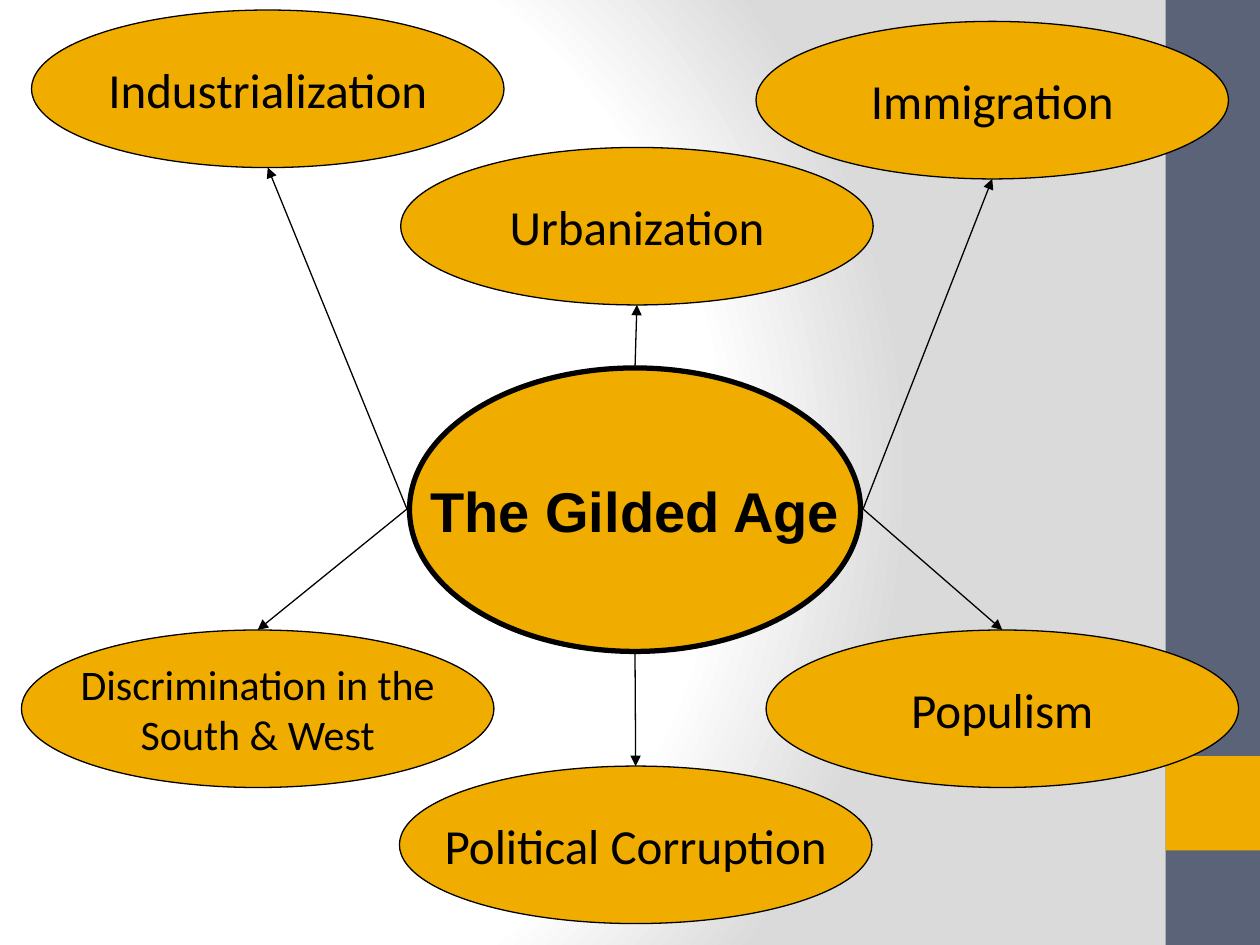
import pptx
import pptx.dml.color
import pptx.enum.shapes
import pptx.enum.text
import pptx.oxml
import pptx.oxml.ns
import pptx.util
from lxml import etree

Inches = pptx.util.Inches
Pt = pptx.util.Pt
RGBColor = pptx.dml.color.RGBColor
Shape = pptx.enum.shapes.MSO_SHAPE
qn = pptx.oxml.ns.qn

SLATE = RGBColor(0x5A, 0x63, 0x78)
GOLD = RGBColor(0xF0, 0xAD, 0x00)
BLACK = RGBColor(0, 0, 0)
WHITE = RGBColor(0xFF, 0xFF, 0xFF)
GRAY = RGBColor(0xDA, 0xDA, 0xDA)

TOPIC_WIDTH, TOPIC_HEIGHT = 3.75, 1.25


class ConceptMap:
    fill = GOLD
    ink = BLACK
    thin = 0.75

    def __init__(self, slide):
        self.slide = slide

    def background(self, stops):
        self.slide.background.fill.gradient()
        gradient = self.slide.element.find(".//" + qn("a:gradFill"))
        stop_xml = "".join(
            f'<a:gs pos="{percent * 1000}"><a:srgbClr val="{color}"/></a:gs>'
            for percent, color in stops
        )
        glow = pptx.oxml.parse_xml(
            f'<a:gradFill {pptx.oxml.ns.nsdecls("a")} rotWithShape="1">'
            f"<a:gsLst>{stop_xml}</a:gsLst>"
            '<a:path path="circle"><a:fillToRect l="20000" t="50000" '
            'r="100000" b="50000"/></a:path></a:gradFill>'
        )
        gradient.getparent().replace(gradient, glow)

    def shape(self, kind, left, top, width, height, color):
        shape = self.slide.shapes.add_shape(
            kind, Inches(left), Inches(top), Inches(width), Inches(height)
        )
        shape.shadow.inherit = False
        shape.fill.solid()
        shape.fill.fore_color.rgb = color
        return shape

    def band(self, top, height, color):
        self.shape(Shape.RECTANGLE, 9.25, top, 0.75, height, color).line.fill.background()

    def oval(self, text, box, size, font="Calibri", bold=False, border=thin):
        oval = self.shape(Shape.OVAL, *box, self.fill)
        oval.line.color.rgb = self.ink
        oval.line.width = Pt(border)
        frame = oval.text_frame
        frame.word_wrap = False
        frame.vertical_anchor = pptx.enum.text.MSO_ANCHOR.MIDDLE
        label = frame.paragraphs[0]
        label.text = text
        label.alignment = pptx.enum.text.PP_ALIGN.CENTER
        label.font.name = font
        label.font.size = Pt(size)
        label.font.bold = bold
        label.font.color.rgb = self.ink

    def arrow(self, start, end):
        arrow = self.slide.shapes.add_connector(
            pptx.enum.shapes.MSO_CONNECTOR.STRAIGHT,
            *(Inches(value) for value in (*start, *end)),
        )
        arrow.line.color.rgb = self.ink
        arrow.line.width = Pt(self.thin)
        etree.SubElement(arrow.line._get_or_add_ln(), qn("a:tailEnd"), type="triangle")
        etree.SubElement(arrow.element.spPr, qn("a:effectLst"))


def main():
    deck = pptx.Presentation()
    deck.slide_width, deck.slide_height = Inches(10), Inches(7.5)
    concept_map = ConceptMap(deck.slides.add_slide(deck.slide_layouts[6]))

    concept_map.background([(0, WHITE), (75, WHITE), (100, GRAY)])
    concept_map.band(0, 7.5, SLATE)
    concept_map.band(6, 0.75, GOLD)
    concept_map.oval(
        "The Gilded Age", (3.25, 2.92, 3.58, 2.25), 32, "Arial", bold=True, border=3
    )

    left_side, right_side = (3.23, 4.04), (6.85, 4.04)
    top_side, bottom_side = (5.04, 2.92), (5.04, 5.19)
    topics = [
        ("Industrialization", 0.25, 0.08, 28, left_side),
        ("Immigration", 6, 0.17, 28, right_side),
        ("Urbanization", 3.18, 1.17, 28, top_side),
        ("Discrimination in the\nSouth & West", 0.17, 5, 24, left_side),
        ("Political Corruption", 3.17, 6.08, 28, bottom_side),
        ("Populism", 6.08, 5, 28, right_side),
    ]
    for text, left, top, size, _ in topics:
        concept_map.oval(text, (left, top, TOPIC_WIDTH, TOPIC_HEIGHT), size)
    for _, left, top, _, start in topics:
        near_edge = top if top > start[1] else top + TOPIC_HEIGHT
        concept_map.arrow(start, (left + TOPIC_WIDTH / 2, near_edge))

    deck.save("out.pptx")


if __name__ == "__main__":
    main()
